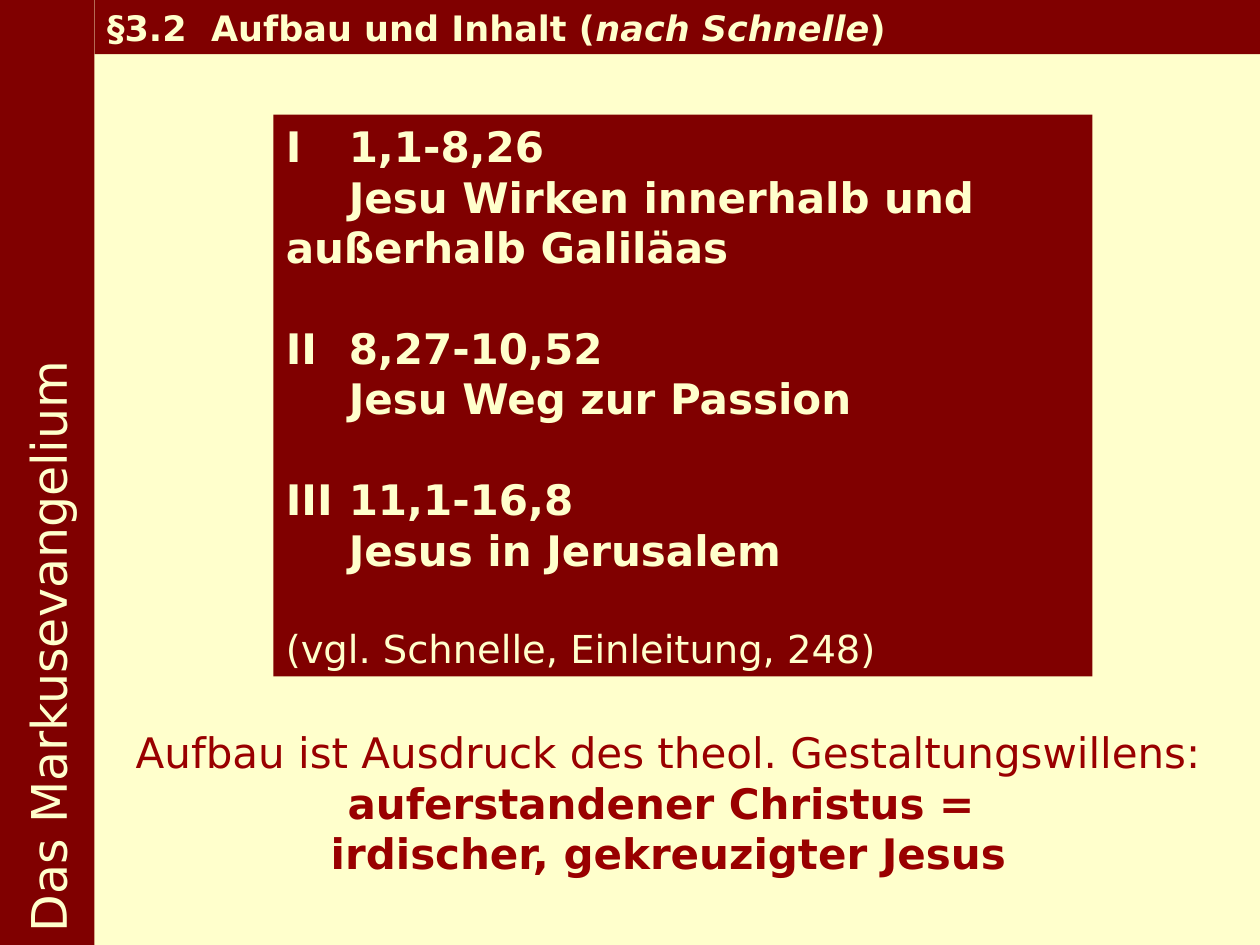
from pptx import Presentation
from pptx.dml.color import RGBColor
from pptx.enum.shapes import MSO_SHAPE
from pptx.enum.text import MSO_ANCHOR, MSO_AUTO_SIZE, PP_ALIGN
from pptx.util import Inches, Pt

RECTANGLE = MSO_SHAPE.RECTANGLE
TOP, MIDDLE = MSO_ANCHOR.TOP, MSO_ANCHOR.MIDDLE
LEFT, CENTER = PP_ALIGN.LEFT, PP_ALIGN.CENTER
NO_AUTOFIT = MSO_AUTO_SIZE.NONE
TITLE_ONLY = 5


def color(value):
    return RGBColor.from_string(value)


class SlideBuilder:
    font = "DejaVu Sans"
    cream = "FFFFCC"
    maroon = "800000"
    red = "990000"

    def __init__(self, presentation):
        self.slide = presentation.slides.add_slide(presentation.slide_layouts[TITLE_ONLY])
        background = self.slide.background.fill
        background.solid()
        background.fore_color.rgb = color(self.cream)

    def fill(self, shape):
        shape.fill.solid()
        shape.fill.fore_color.rgb = color(self.maroon)
        shape.line.fill.background()

    def format_frame(self, frame, anchor, wrap):
        frame.auto_size = NO_AUTOFIT
        frame.word_wrap = wrap
        frame.vertical_anchor = anchor

    def add_run(self, paragraph, text, size, text_color, bold=False, italic=False):
        run = paragraph.add_run()
        run.text = text
        run.font.name = self.font
        run.font.size = Pt(size)
        run.font.bold = bold
        run.font.italic = italic
        run.font.color.rgb = color(text_color)

    def add_paragraphs(self, frame, lines, text_color, alignment):
        for index, (text, size, bold, gap) in enumerate(lines):
            paragraph = frame.add_paragraph() if index else frame.paragraphs[0]
            paragraph.alignment = alignment
            paragraph.space_before = Pt(gap)
            self.add_run(paragraph, text, size, text_color, bold)

    def title(self, runs, left, top, width, height):
        title = self.slide.shapes.title
        title.left, title.top = Inches(left), Inches(top)
        title.width, title.height = Inches(width), Inches(height)
        self.fill(title)
        self.format_frame(title.text_frame, MIDDLE, True)
        paragraph = title.text_frame.paragraphs[0]
        paragraph.alignment = LEFT
        for text, italic in runs:
            self.add_run(paragraph, text, 20, self.cream, True, italic)

    def panel(self, lines, left, top, width, height, anchor=TOP):
        shape = self.slide.shapes.add_shape(
            RECTANGLE, Inches(left), Inches(top), Inches(width), Inches(height))
        shape.shadow.inherit = False
        self.fill(shape)
        self.format_frame(shape.text_frame, anchor, True)
        self.add_paragraphs(shape.text_frame, lines, self.cream, LEFT)
        return shape

    def sidebar(self, text, left, top, width, height):
        shape = self.panel([(text, 28, False, 0)], left, top, width, height, MIDDLE)
        frame = shape.text_frame
        frame.margin_top = frame.margin_bottom = Inches(0.1)
        frame._txBody.bodyPr.set("vert", "vert270")

    def text(self, lines, left, top, width, height):
        box = self.slide.shapes.add_textbox(
            Inches(left), Inches(top), Inches(width), Inches(height))
        self.format_frame(box.text_frame, TOP, False)
        self.add_paragraphs(box.text_frame, lines, self.red, CENTER)


def main():
    presentation = Presentation()
    presentation.slide_width = Inches(10)
    presentation.slide_height = Inches(7.5)
    builder = SlideBuilder(presentation)

    blank_line = 28.8
    sections = [
        ("I", "1,1-8,26", "Jesu Wirken innerhalb und \taußerhalb Galiläas"),
        ("II", "8,27-10,52", "Jesu Weg zur Passion"),
        ("III", "11,1-16,8", "Jesus in Jerusalem"),
    ]
    outline = []
    for number, verses, content in sections:
        gap = blank_line if outline else 0
        outline.append((f"{number} \t{verses}", 24, True, gap))
        outline.append((f"\t{content}", 24, True, 0))
    outline.append(("(vgl. Schnelle, Einleitung, 248)", 22, False, blank_line))
    builder.panel(outline, 2.17, 0.91, 6.5, 4.46)

    builder.text([
        ("Aufbau ist Ausdruck des theol. Gestaltungswillens:", 24, False, 0),
        ("auferstandener Christus = ", 24, True, 0),
        ("irdischer, gekreuzigter Jesus", 24, True, 0),
    ], 0.94, 5.72, 8.73, 1.3)
    builder.sidebar("Das Markusevangelium", 0, 0, 0.75, 7.5)
    builder.title([
        ("§3.2  Aufbau und Inhalt (", False),
        ("nach Schnelle", True),
        (")", False),
    ], 0.75, 0, 9.25, 0.43)

    presentation.save("out.pptx")


if __name__ == "__main__":
    main()
